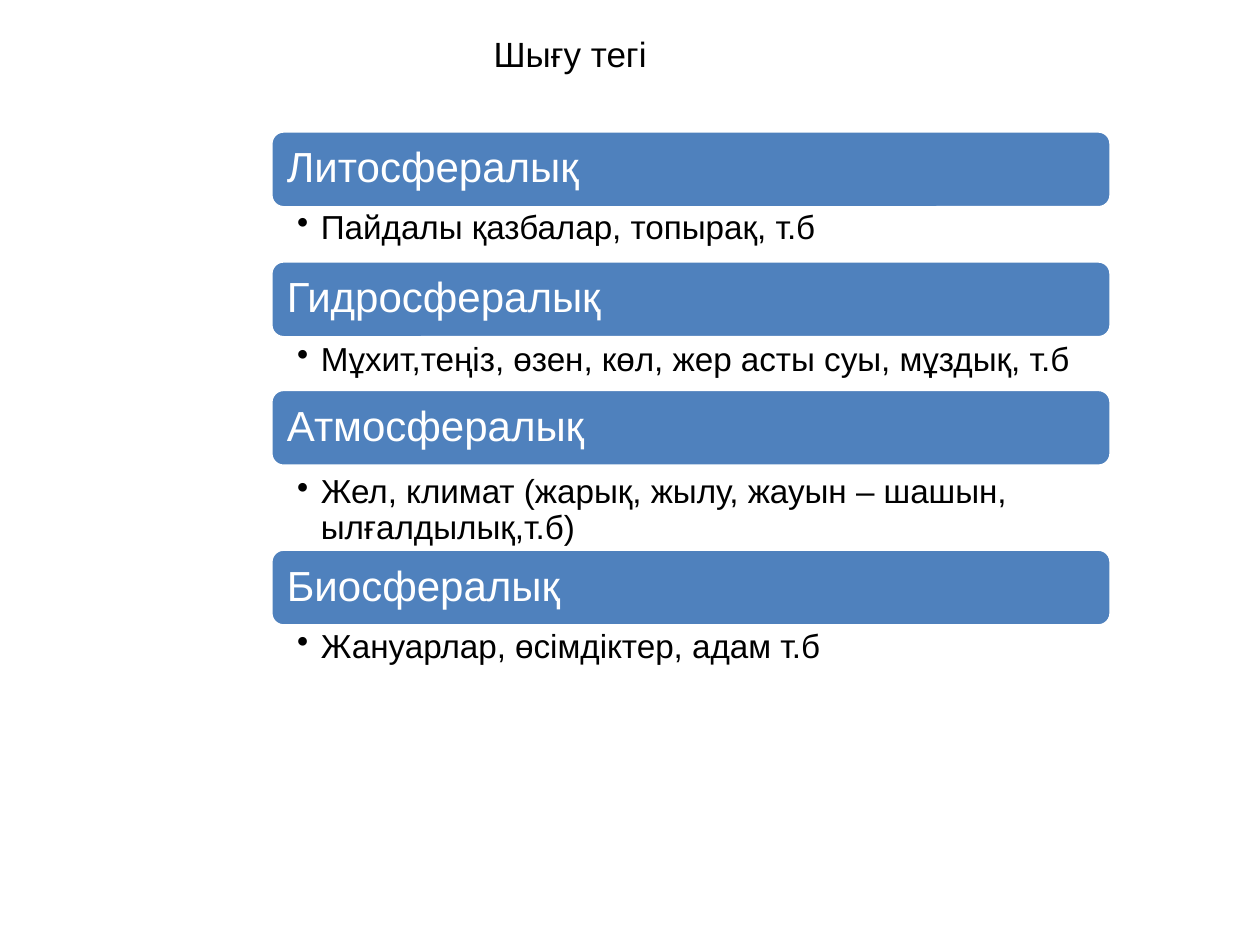
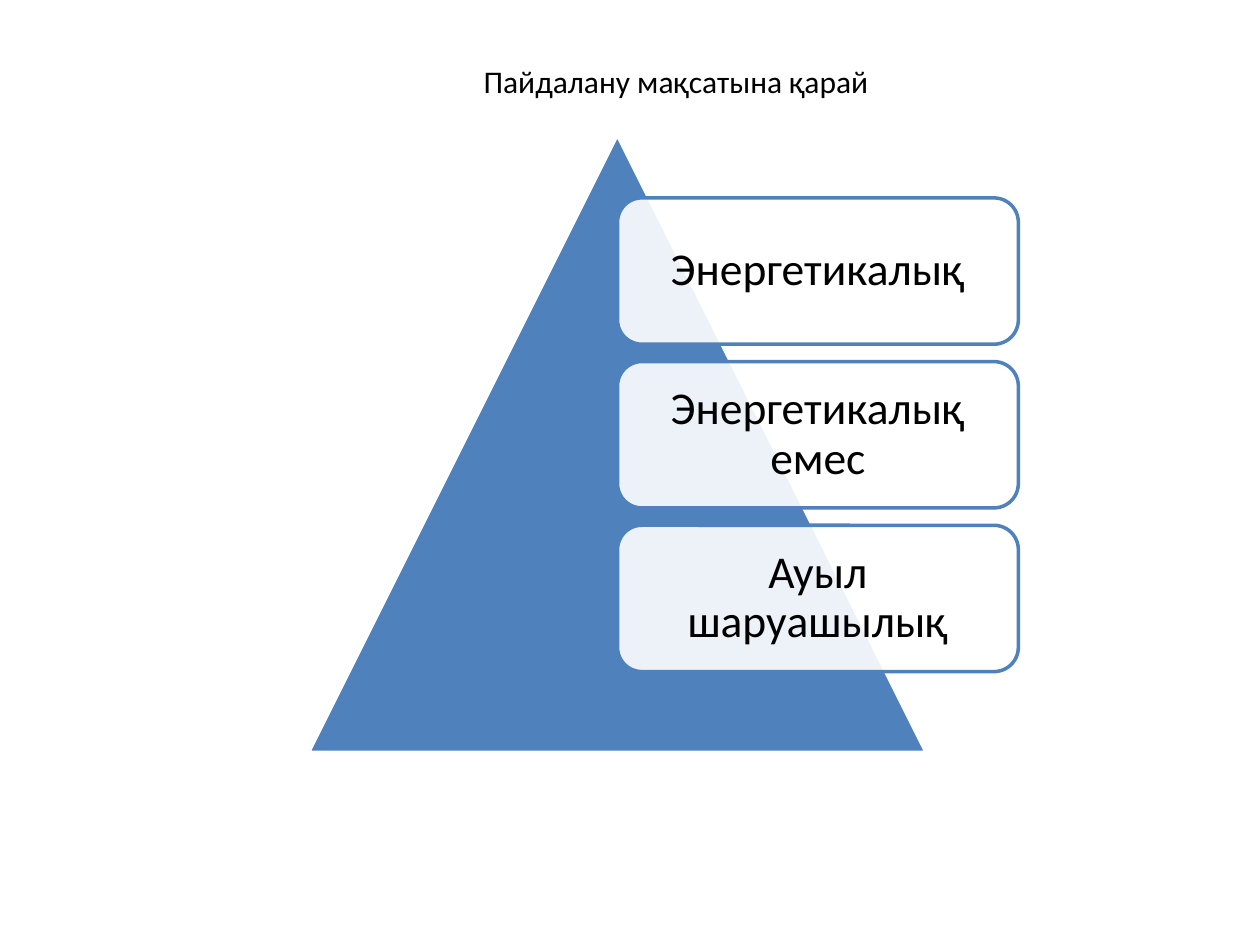
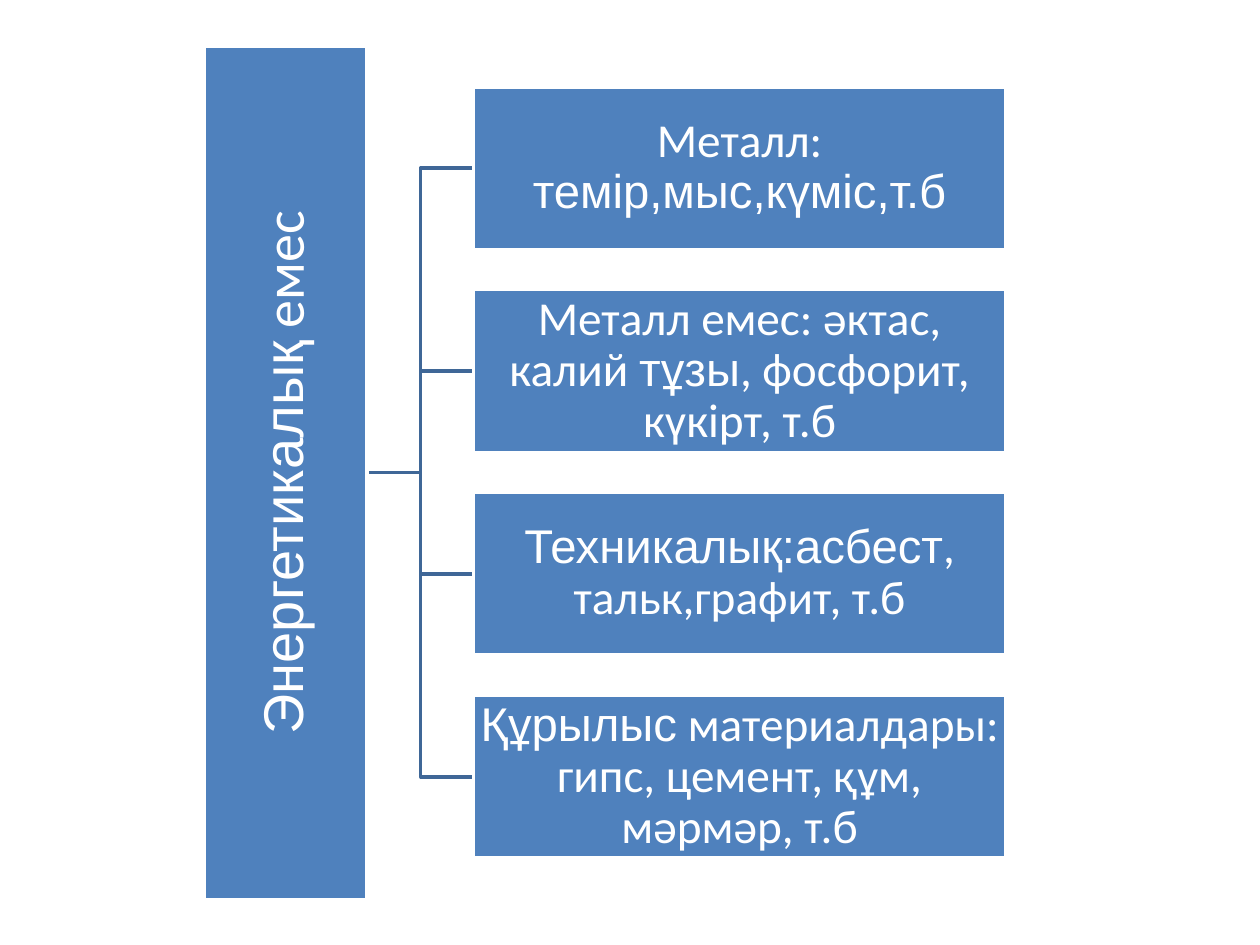
from dataclasses import dataclass
from typing import NamedTuple

from lxml import etree
from pptx import Presentation
from pptx.dml.color import RGBColor
from pptx.enum import shapes as shp, text as txt
from pptx.oxml import ns
from pptx.util import Cm, Pt

BLUE = RGBColor(0x4F, 0x81, 0xBD)
NAVY = RGBColor(0x3F, 0x67, 0x97)
WHITE = RGBColor(0xFF, 0xFF, 0xFF)
BLACK = RGBColor(0, 0, 0)
SANS = "Arial"
BODY = "Calibri"
EDGE = Pt(2)
KIND = shp.MSO_SHAPE
ALIGN = txt.PP_ALIGN


class Box(NamedTuple):
    left: float
    top: float
    width: float
    height: float

    def cm(self) -> list[Cm]:
        return [Cm(side) for side in self]


class Run(NamedTuple):
    text: str
    font: str


class Sphere(NamedTuple):
    name: str
    top: float
    note: str
    under: float
    height: float


@dataclass
class Label:
    runs: list[Run]
    size: int
    color: RGBColor = WHITE
    align: ALIGN = ALIGN.CENTER
    pad: tuple[float, float, float, float] = (0.05, 0.05, 0.05, 0.05)
    anchor: txt.MSO_ANCHOR = txt.MSO_ANCHOR.MIDDLE
    bullet: bool = False


SPHERES = [
    Sphere("Литосфералық", 2.64, "Пайдалы қазбалар, топырақ, т.б", 4.17, 1.09),
    Sphere("Гидросфералық", 5.26,
           "Мұхит,теңіз, өзен, көл, жер асты суы, мұздық, т.б", 6.83, 1.09),
    Sphere("Атмосфералық", 7.85,
           "Жел, климат (жарық, жылу, жауын – шашын, ылғалдылық,т.б)", 9.5, 1.57),
    Sphere("Биосфералық", 11.07, "Жануарлар, өсімдіктер, адам т.б", 12.62, 1.09),
]
USES = ["Энергетикалық", "Энергетикалық емес", "Ауыл шаруашылық"]
ROOT = [Run("Энергетикалық", SANS), Run(" емес", BODY)]
GROUPS = [
    [Run("Металл: ", BODY), Run("темір,мыс,күміс,т.б", SANS)],
    [Run("Металл емес: әктас, калий ", BODY), Run("тұзы", SANS),
     Run(", фосфорит, күкірт, т.б", BODY)],
    [Run("Техникалық:асбест", SANS), Run(", тальк,графит, т.б", BODY)],
    [Run("Құрылыс", SANS),
     Run(" материалдары: гипс, цемент, құм, мәрмәр, т.б", BODY)],
]


def write(shape, label: Label) -> None:
    frame = shape.text_frame
    frame.word_wrap = True
    frame.vertical_anchor = label.anchor
    (frame.margin_left, frame.margin_top,
     frame.margin_right, frame.margin_bottom) = [Cm(side) for side in label.pad]
    para = frame.paragraphs[0]
    if label.bullet:
        props = para._p.get_or_add_pPr()
        props.set("marL", str(Cm(0.48)))
        props.set("indent", str(-Cm(0.48)))
        etree.SubElement(props, ns.qn("a:buChar"), char="•")
    para.alignment = label.align
    para.line_spacing = 0.9
    para.font.size = Pt(label.size)
    para.font.color.rgb = label.color
    mixed = len(label.runs) > 1
    if not mixed:
        para.font.name = label.runs[0].font
    for part in label.runs:
        run = para.add_run()
        run.text = part.text
        if mixed:
            run.font.name = part.font


def block(slide, kind: KIND, box: Box, fill: RGBColor = BLUE,
          edge: RGBColor = WHITE, label: Label | None = None):
    shape = slide.shapes.add_shape(kind, *box.cm())
    shape.shadow.inherit = False
    shape.fill.solid()
    shape.fill.fore_color.rgb = fill
    shape.line.color.rgb = edge
    shape.line.width = EDGE
    if label:
        write(shape, label)
    return shape


def title(slide, box: Box, words: str, size: int, font: str) -> None:
    frame = slide.shapes.add_textbox(*box.cm()).text_frame
    frame.word_wrap = False
    frame.auto_size = txt.MSO_AUTO_SIZE.SHAPE_TO_FIT_TEXT
    para = frame.paragraphs[0]
    para.text = words
    para.font.size = Pt(size)
    para.font.name = font
    para.font.color.rgb = BLACK


def fade(shape, share: int) -> None:
    color = shape.fill._xPr.find(ns.qn("a:solidFill"))[0]
    etree.SubElement(color, ns.qn("a:alpha"), val=str(share * 1000))


def elbow(slide, start: tuple[float, float], bend: float,
          end: tuple[float, float]) -> None:
    points = [start, (bend, start[1]), (bend, end[1]), end]
    first, *rest = [(Cm(x), Cm(y)) for x, y in points]
    pen = slide.shapes.build_freeform(*first)
    pen.add_line_segments(rest, close=False)
    line = pen.convert_to_shape()
    line.shadow.inherit = False
    line.fill.background()
    line.line.color.rgb = NAVY
    line.line.width = EDGE


def origins(slide) -> None:
    title(slide, Box(9.7, 0.53, 3.63, 1.12), "Шығу тегі", 20, SANS)
    left, width = 5.46, 16.94
    for item in SPHERES:
        head = Label([Run(item.name, SANS)], 24, align=ALIGN.LEFT, pad=(0.25,) * 4)
        block(slide, KIND.ROUNDED_RECTANGLE, Box(left, item.top, width, 1.55),
              label=head)
        note = slide.shapes.add_textbox(
            *Box(left, item.under, width, item.height).cm())
        write(note, Label([Run(item.note, SANS)], 19, BLACK, ALIGN.LEFT,
                          (0.53, 0.08, 0.48, 0.08), txt.MSO_ANCHOR.TOP, True))


def purposes(slide) -> None:
    title(slide, Box(9.5, 1.12, 8.53, 1.02), "Пайдалану мақсатына қарай", 18, BODY)
    side = 12.45
    block(slide, KIND.ISOSCELES_TRIANGLE, Box(6.22, 2.72, side, side))
    for row, name in enumerate(USES):
        label = Label([Run(name, BODY)], 26, BLACK, pad=(0.28,) * 4)
        card = block(slide, KIND.ROUNDED_RECTANGLE,
                     Box(12.45, 3.99 + 3.3 * row, 8.08, 2.95), WHITE, BLUE, label)
        fade(card, 90)


def kinds(slide) -> None:
    left, top, step, height = 9.55, 1.75, 4.09, 3.28
    tops = [top + step * row for row in range(len(GROUPS))]
    for y in reversed(tops):
        elbow(slide, (7.39, 9.53), 8.48, (left, y + height / 2))
    root = block(slide, KIND.RECTANGLE, Box(-2.84, 7.89, 17.2, height),
                 label=Label(ROOT, 32))
    root.rotation = 270
    for y, runs in zip(tops, GROUPS):
        block(slide, KIND.RECTANGLE, Box(left, y, 10.72, height),
              label=Label(runs, 27))


def main() -> None:
    deck = Presentation()
    deck.slide_width, deck.slide_height = Cm(25.4), Cm(19.05)
    for draw in (origins, purposes, kinds):
        draw(deck.slides.add_slide(deck.slide_layouts[6]))
    deck.save("out.pptx")


if __name__ == "__main__":
    main()
